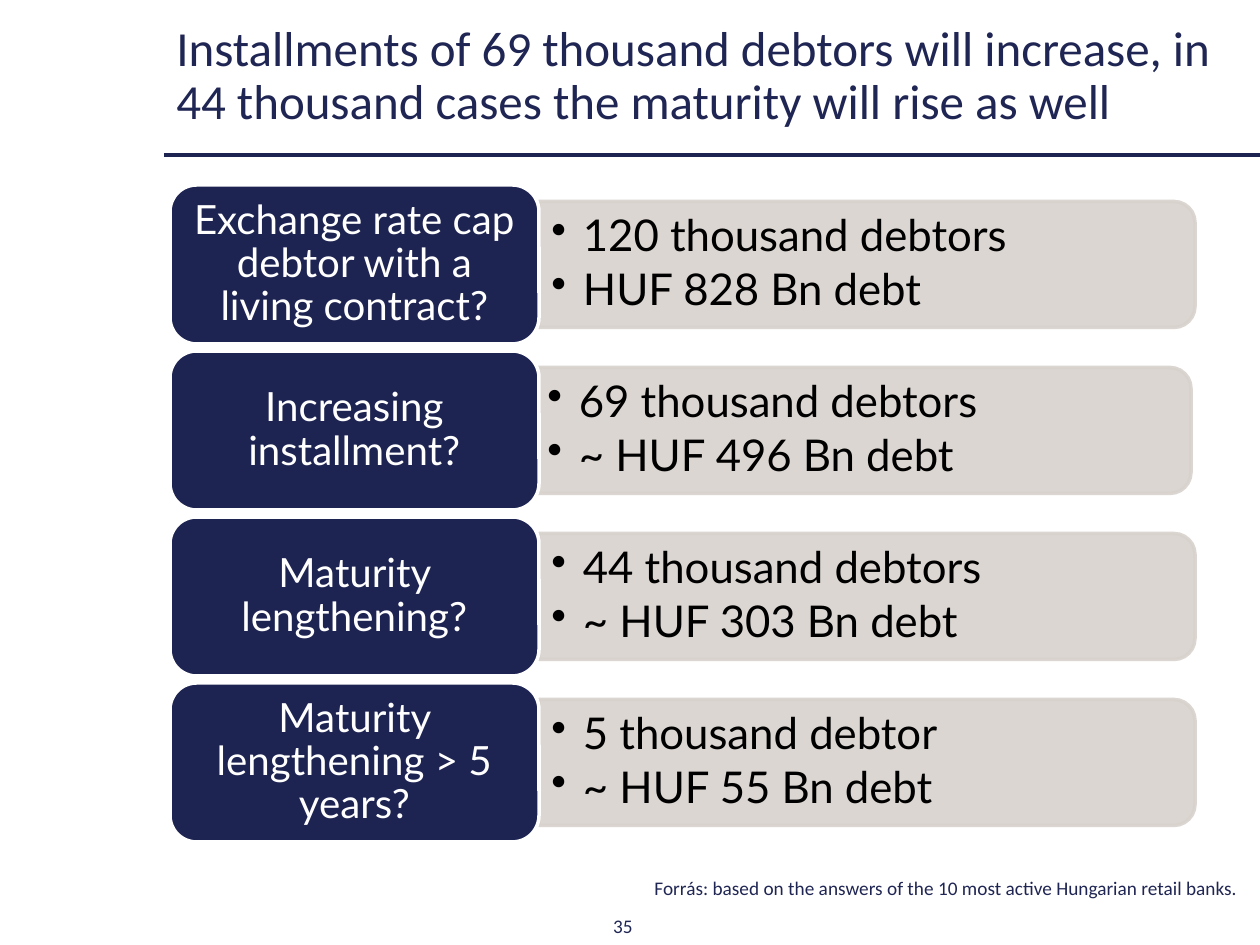
from lxml.etree import SubElement
from pptx import Presentation
from pptx.dml.color import RGBColor
from pptx.enum.shapes import MSO_CONNECTOR, MSO_SHAPE
from pptx.enum.text import MSO_ANCHOR, PP_ALIGN
from pptx.oxml.ns import qn
from pptx.util import Emu, Pt

TITLE = ("Installments of 69 thousand debtors will increase, in 44 thousand cases "
         "the maturity will rise as well")
# question, answers, left edge of the answer bar
ROWS = [
    ("Exchange rate cap debtor with a living contract?",
     ["120 thousand debtors", "HUF 828 Bn debt"], 539),
    ("Increasing installment?", ["69 thousand debtors", "~ HUF 496 Bn debt"], 535),
    ("Maturity lengthening?", ["44 thousand debtors", "~ HUF 303 Bn debt"], 539),
    ("Maturity lengthening > 5 years?", ["5 thousand debtor", "~ HUF 55 Bn debt"], 539),
]
SOURCE = "Forrás: based on the answers of the 10 most active Hungarian retail banks."
PAGE_NUMBER = "35"

NAVY, INK, GREY, WHITE, BLACK = "1E2452", "202653", "D8D2CD", "FFFFFF", "000000"
PAGE_W, PAGE_H = 1260, 945
ROWS_TOP, ROW_PITCH = 185, 166
QUESTION_X, QUESTION_W, QUESTION_H = 170, 369, 159
BAR_W, BAR_H = 656, 126
ANSWER_W, ANSWER_H = 650, 115


def px(n):
    return Emu(round(n * 914400 / 126))


def color(hex_code):
    return RGBColor.from_string(hex_code)


def write(shape, paragraphs, size, font="Calibri", ink=INK, align=PP_ALIGN.LEFT,
          spacing=0.9, gap=0, bullets=False):
    frame = shape.text_frame
    frame.word_wrap = True
    frame.vertical_anchor = MSO_ANCHOR.MIDDLE
    for i, text in enumerate(paragraphs):
        paragraph = frame.paragraphs[0] if i == 0 else frame.add_paragraph()
        paragraph.text = text
        paragraph.alignment = align
        paragraph.line_spacing = spacing
        if i:
            paragraph.space_before = Pt(gap)
        if bullets:
            props = paragraph._p.get_or_add_pPr()
            props.set("marL", "228600")
            props.set("indent", "-228600")
            SubElement(props, qn("a:buChar"), char="•")
        paragraph.font.size = Pt(size)
        paragraph.font.name = font
        paragraph.font.color.rgb = color(ink)


def add_text(slide, box, paragraphs, size, **text_format):
    write(slide.shapes.add_textbox(*map(px, box)), paragraphs, size, **text_format)


def add_box(slide, preset, box, fill, line, opacity=None):
    shape = slide.shapes.add_shape(preset, *map(px, box))
    shape.shadow.inherit = False
    shape.fill.solid()
    shape.fill.fore_color.rgb = color(fill)
    shape.line.color.rgb = color(line)
    shape.line.width = Pt(2)
    if opacity:
        for rgb in shape._element.spPr.iter(qn("a:srgbClr")):
            SubElement(rgb, qn("a:alpha"), val=str(opacity * 1000))
    return shape


def add_rule(slide, x1, x2, y):
    rule = slide.shapes.add_connector(MSO_CONNECTOR.STRAIGHT, px(x1), px(y), px(x2), px(y))
    rule.line.color.rgb = color(NAVY)
    rule.line.width = Pt(2.25)
    SubElement(rule._element.spPr, qn("a:effectLst"))


def add_row(slide, top, question, answers, bar_x):
    middle = top + QUESTION_H / 2
    # The bar is an upright shape turned by 90 degrees about its centre.
    bar = add_box(slide, MSO_SHAPE.ROUND_2_SAME_RECTANGLE,
                  (bar_x + (BAR_W - BAR_H) / 2, middle - BAR_W / 2, BAR_H, BAR_W),
                  GREY, GREY, opacity=90)
    bar.rotation = 90
    add_text(slide, (bar_x, middle - ANSWER_H / 2, ANSWER_W, ANSWER_H), answers, 25,
             font="Lato", ink=BLACK, gap=3.75, bullets=True)
    label = add_box(slide, MSO_SHAPE.ROUNDED_RECTANGLE,
                    (QUESTION_X, top, QUESTION_W, QUESTION_H), NAVY, WHITE)
    write(label, [question], 23, font="Lato", ink=WHITE, align=PP_ALIGN.CENTER)


def main():
    deck = Presentation()
    deck.slide_width, deck.slide_height = px(PAGE_W), px(PAGE_H)
    slide = deck.slides.add_slide(deck.slide_layouts[6])
    add_rule(slide, 164, PAGE_W, 155)
    add_text(slide, (164, 25, 1081, 105), [TITLE], 28)
    add_text(slide, (481, 907, 284, 37), [PAGE_NUMBER], 11,
             align=PP_ALIGN.CENTER, spacing=1.0)
    add_text(slide, (461, 870, 789, 39), [SOURCE], 11, align=PP_ALIGN.RIGHT)
    for i, row in enumerate(ROWS):
        add_row(slide, ROWS_TOP + i * ROW_PITCH, *row)
    deck.save("out.pptx")


if __name__ == "__main__":
    main()
